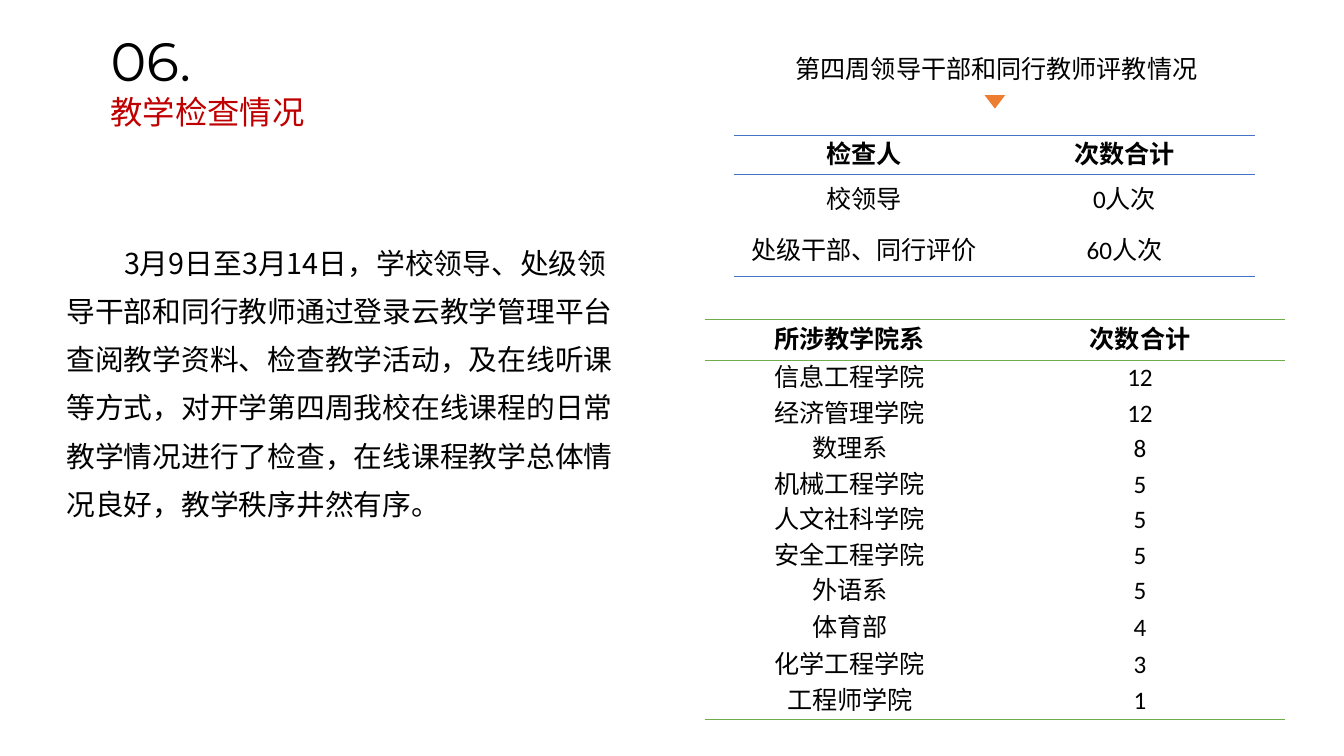
from dataclasses import dataclass

from lxml.etree import SubElement
from pptx import Presentation
from pptx.dml.color import RGBColor
from pptx.enum.shapes import MSO_SHAPE
from pptx.enum.text import MSO_ANCHOR, MSO_AUTO_SIZE, PP_ALIGN
from pptx.oxml.ns import qn
from pptx.util import Inches, Pt

BLACK = RGBColor(0x00, 0x00, 0x00)
RED = RGBColor(0xC0, 0x00, 0x00)
ORANGE = RGBColor(0xED, 0x7D, 0x31)
BLUE = RGBColor(0x44, 0x72, 0xC4)
GREEN = RGBColor(0x70, 0xAD, 0x47)
PLAIN_TABLE_STYLE = "{2D5ABB26-0587-4C30-8999-92F81FD0307C}"

BODY = (
    "3月9日至3月14日，学校领导、处级领导干部和同行教师通过登录云教学管理平台查阅教学资料、"
    "检查教学活动，及在线听课等方式，对开学第四周我校在线课程的日常教学情况进行了检查，"
    "在线课程教学总体情况良好，教学秩序井然有序。"
)


@dataclass(frozen=True)
class TextStyle:
    font: str
    size: float
    color: RGBColor = BLACK
    bold: bool = False


@dataclass(frozen=True)
class RuledTable:
    left: float
    top: float
    column_width: float
    header_height: float
    row_height: float
    rule_color: RGBColor
    rows: list[tuple[str, str]]
    top_anchored_rows: int = 0


NUMBER = TextStyle("Montserrat", 60)
HEADING = TextStyle("Roboto", 36, RED)
BODY_STYLE = TextStyle("Noto Sans CJK SC", 32)
LABEL = TextStyle("Calibri", 28)
LABEL_BOLD = TextStyle("Calibri", 28, bold=True)

INSPECTORS = RuledTable(11.35, 2.09, 4.03, 0.61, 0.79, BLUE, [
    ("检查人", "次数合计"),
    ("校领导", "0人次"),
    ("处级干部、同行评价", "60人次"),
])
DEPARTMENTS = RuledTable(10.9, 4.94, 4.49, 0.63, 0.55, GREEN, [
    ("所涉教学院系", "次数合计"),
    ("信息工程学院", "12"),
    ("经济管理学院", "12"),
    ("数理系", "8"),
    ("机械工程学院", "5"),
    ("人文社科学院", "5"),
    ("安全工程学院", "5"),
    ("外语系", "5"),
    ("体育部", "4"),
    ("化学工程学院", "3"),
    ("工程师学院", "1"),
], top_anchored_rows=3)


def write(paragraph, text: str, style: TextStyle, alignment=PP_ALIGN.LEFT) -> None:
    paragraph.text = text
    paragraph.alignment = alignment
    font = paragraph.font
    font.name = style.font
    font.size = Pt(style.size)
    font.bold = style.bold
    font.color.rgb = style.color
    properties = paragraph._p.pPr.find(qn("a:defRPr"))
    SubElement(properties, qn("a:ea"), typeface=style.font)


def place(shape, left: float, top: float, width: float, height: float):
    """Position a text shape and return its wrapped text frame."""
    shape.left, shape.top = Inches(left), Inches(top)
    shape.width, shape.height = Inches(width), Inches(height)
    frame = shape.text_frame
    frame.word_wrap = True
    frame.auto_size = MSO_AUTO_SIZE.SHAPE_TO_FIT_TEXT
    frame.vertical_anchor = MSO_ANCHOR.TOP
    return frame


def add_rule(cell, side: str, color: RGBColor) -> None:
    line = SubElement(cell._tc.get_or_add_tcPr(), qn(f"a:{side}"), w=str(Pt(1)))
    fill = SubElement(line, qn("a:solidFill"))
    SubElement(fill, qn("a:srgbClr"), val=str(color))


def add_ruled_table(slide, spec_table: RuledTable) -> None:
    count = len(spec_table.rows)
    heights = [spec_table.header_height] + [spec_table.row_height] * (count - 1)
    table = slide.shapes.add_table(
        count, 2, Inches(spec_table.left), Inches(spec_table.top),
        Inches(2 * spec_table.column_width), Inches(sum(heights)),
    ).table
    table.first_row = table.horz_banding = False
    table._tbl.tblPr.find(qn("a:tableStyleId")).text = PLAIN_TABLE_STYLE
    for column in table.columns:
        column.width = Inches(spec_table.column_width)
    for index, values in enumerate(spec_table.rows):
        table.rows[index].height = Inches(heights[index])
        for cell, value in zip(table.rows[index].cells, values):
            if index < count - spec_table.top_anchored_rows:
                cell.vertical_anchor = MSO_ANCHOR.MIDDLE
                cell.margin_left = cell.margin_right = 0
                cell.margin_top = cell.margin_bottom = 0
            style = LABEL if index else LABEL_BOLD
            write(cell.text_frame.paragraphs[0], value, style, PP_ALIGN.CENTER)
            # Rules frame the header and close the table
            if index == 0:
                add_rule(cell, "lnT", spec_table.rule_color)
            if index in (0, count - 1):
                add_rule(cell, "lnB", spec_table.rule_color)
            # Fill follows the border lines in the cell properties
            cell.fill.background()


def main() -> None:
    presentation = Presentation()
    presentation.slide_width = Inches(20.79)
    presentation.slide_height = Inches(11.69)
    slide = presentation.slides.add_slide(presentation.slide_layouts[5])

    # Section number and title
    title = place(slide.shapes.title, 1.61, 0.38, 4.42, 1.72)
    write(title.paragraphs[0], "06.", NUMBER)
    write(title.add_paragraph(), "教学检查情况", HEADING)

    # Caption with its pointer
    group = slide.shapes.add_group_shape()
    caption = place(group.shapes.add_textbox(0, 0, 0, 0), 11.35, 0.78, 8.13, 0.57)
    write(caption.paragraphs[0], "第四周领导干部和同行教师评教情况", LABEL, PP_ALIGN.CENTER)
    pointer = group.shapes.add_shape(
        MSO_SHAPE.ISOSCELES_TRIANGLE,
        Inches(15.23), Inches(1.47), Inches(0.32), Inches(0.21),
    )
    pointer.rotation = 180
    pointer.shadow.inherit = False
    pointer.fill.solid()
    pointer.fill.fore_color.rgb = ORANGE
    pointer.line.fill.background()

    # Summary paragraph
    body = place(slide.shapes.add_textbox(0, 0, 0, 0), 0.93, 3.54, 8.75, 4.61)
    paragraph = body.paragraphs[0]
    write(paragraph, BODY, BODY_STYLE)
    paragraph.line_spacing = Pt(53.6)
    paragraph._p.pPr.set("indent", str(Inches(0.89)))

    # Tables of visit counts
    for ruled_table in (INSPECTORS, DEPARTMENTS):
        add_ruled_table(slide, ruled_table)

    presentation.save("out.pptx")


if __name__ == "__main__":
    main()
